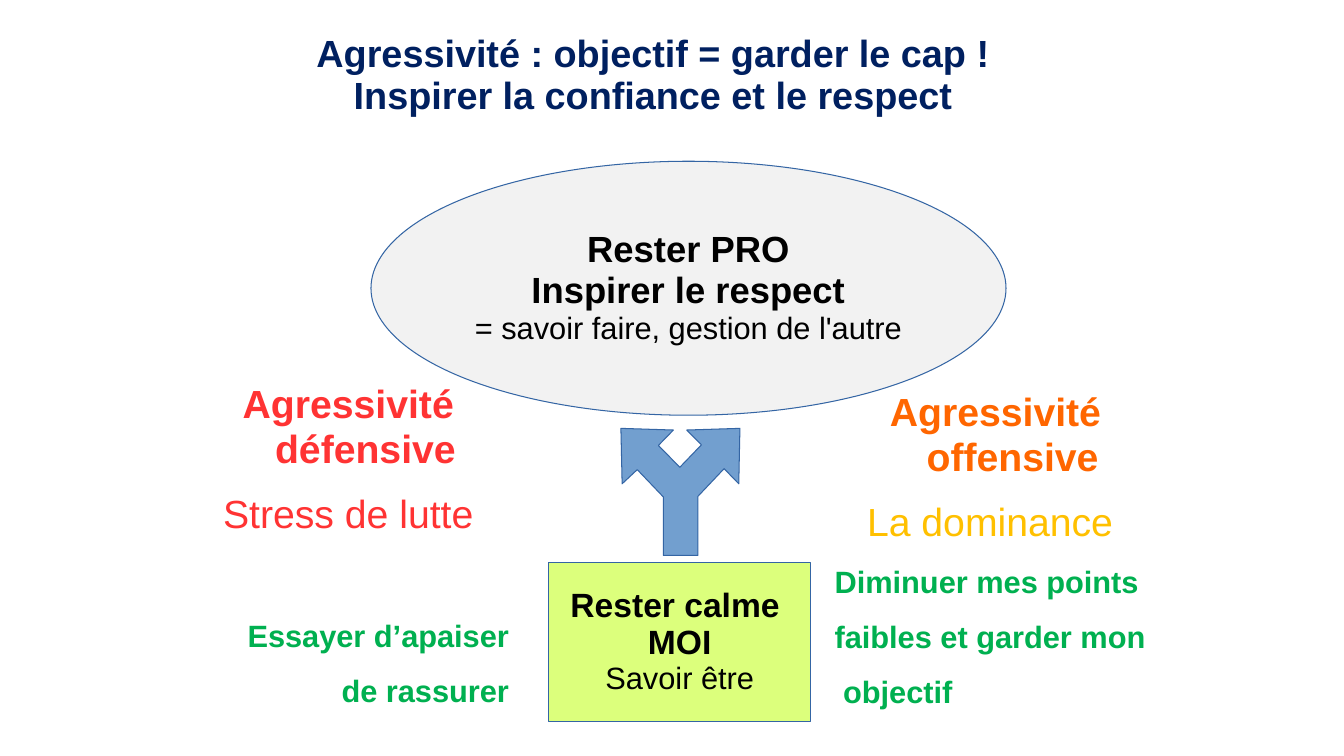
"""Build the slide on staying on course when facing aggressiveness."""
from pptx import Presentation
from pptx.dml.color import RGBColor
from pptx.enum.shapes import MSO_SHAPE as Shape
from pptx.enum.text import MSO_ANCHOR as Anchor, MSO_AUTO_SIZE as AutoSize, PP_ALIGN as Align
from pptx.util import Pt

FONT = "Arial"
NAVY, BLACK, GREEN = "002060", "000000", "00B050"
RED, ORANGE, AMBER = "FF3333", "FF6600", "FFC000"
BORDER, ARROW_BLUE = "3465A4", "729FCF"
LEFT, CENTER, RIGHT = Align.LEFT, Align.CENTER, Align.RIGHT
GAP, WIDE_GAP = 14.2, 59
MARGIN, HANGING, SHORT_HANGING = 27.4, -24.5, -18.4

TITLE_AREA = (147, 10, 646.5, 88.5)
TITLE = [
    ("Agressivité : objectif = garder le cap ! ", 27, NAVY, True),
    ("Inspirer la confiance et le respect ", 27, NAVY, True),
]
STAGES = [
    (Shape.OVAL, (265, 115.2, 453.6, 181.4), "F2F2F2", [
        ("Rester PRO", 26, BLACK, True),
        ("Inspirer le respect", 26, BLACK, True),
        ("= savoir faire, gestion de l'autre", 22, BLACK, False),
    ]),
    (Shape.RECTANGLE, (392, 401.8, 187, 113.4), "DCFF7C", [
        ("Rester calme ", 24, BLACK, True),
        ("MOI", 24, BLACK, True),
        ("Savoir être", 22, BLACK, False),
    ]),
]
ATTITUDES = [
    ((593.3, 278, 232.6, 169), [
        ("Agressivité offensive", 28, ORANGE, True, CENTER, HANGING, GAP),
        ("La dominance ", 28, AMBER, False, CENTER, HANGING, GAP),
        ("Diminuer mes points", 22, GREEN, True, LEFT, HANGING, GAP),
        ("faibles et garder mon", 22, GREEN, True, LEFT, HANGING, GAP),
        ("objectif", 22, GREEN, True, LEFT, SHORT_HANGING, GAP),
    ]),
    ((131, 272.2, 232.6, 153.4), [
        ("Agressivité défensive", 28, RED, True, CENTER, HANGING, GAP),
        ("Stress de lutte", 28, RED, False, CENTER, HANGING, WIDE_GAP),
        ("Essayer d’apaiser", 22, GREEN, True, RIGHT, HANGING, GAP),
        ("de rassurer", 22, GREEN, True, RIGHT, HANGING, GAP),
    ]),
]
FORK = [
    (490.5, 307.2), (501, 317.8), (485.6, 333.8), (470.3, 318.2), (481, 307.2),
    (443.5, 306), (444.4, 345.6), (455.2, 335.5), (473.8, 355), (473.8, 396.7),
    (498.5, 396.7), (498.5, 354.6), (517.2, 334.8), (527.7, 345.6), (528.5, 306),
]


def color(code):
    return RGBColor.from_string(code)


def set_frame(frame, insets, anchor, wrap=True):
    frame.auto_size = AutoSize.NONE
    frame.word_wrap = wrap
    frame.vertical_anchor = anchor
    frame.margin_left, frame.margin_top, frame.margin_right, frame.margin_bottom = map(Pt, insets)


def write(frame, lines, spacing):
    for number, (text, size, ink, bold, *layout) in enumerate(lines):
        line = frame.add_paragraph() if number else frame.paragraphs[0]
        align, indent, after = layout or (CENTER, 0, 0)
        line.alignment = align
        line.line_spacing = spacing
        line.space_before, line.space_after = Pt(0), Pt(after)
        if indent:
            properties = line._p.get_or_add_pPr()
            properties.set("marL", str(Pt(MARGIN)))
            properties.set("indent", str(Pt(indent)))
        run = line.add_run()
        run.text = text
        run.font.name, run.font.size, run.font.bold = FONT, Pt(size), bold
        run.font.color.rgb = color(ink)


def paint(shape, fill):
    shape.shadow.inherit = False
    shape.fill.solid()
    shape.fill.fore_color.rgb = color(fill)
    shape.line.color.rgb = color(BORDER)
    shape.line.width = Pt(0.75)


def main():
    deck = Presentation()
    deck.slide_width, deck.slide_height = Pt(960), Pt(540)
    slide = deck.slides.add_slide(deck.slide_layouts[5])
    shapes = slide.shapes

    title = shapes.title
    title.left, title.top, title.width, title.height = map(Pt, TITLE_AREA)
    set_frame(title.text_frame, (0, 0, 0, 0), Anchor.MIDDLE)
    write(title.text_frame, TITLE, 0.93)

    for area, lines in ATTITUDES:
        attitude = shapes.add_textbox(*map(Pt, area))
        set_frame(attitude.text_frame, (0, 1.4, 0, 0), Anchor.TOP)
        write(attitude.text_frame, lines, 0.95)

    start, *corners = [(Pt(x), Pt(y)) for x, y in FORK]
    outline = shapes.build_freeform(*start)
    outline.add_line_segments(corners, close=True)
    paint(outline.convert_to_shape(), ARROW_BLUE)

    for kind, area, fill, lines in STAGES:
        stage = shapes.add_shape(kind, *map(Pt, area))
        paint(stage, fill)
        set_frame(stage.text_frame, (7.2, 3.6, 7.2, 3.6), Anchor.MIDDLE, wrap=False)
        write(stage.text_frame, lines, 0.93)

    deck.save("out.pptx")


if __name__ == "__main__":
    main()
